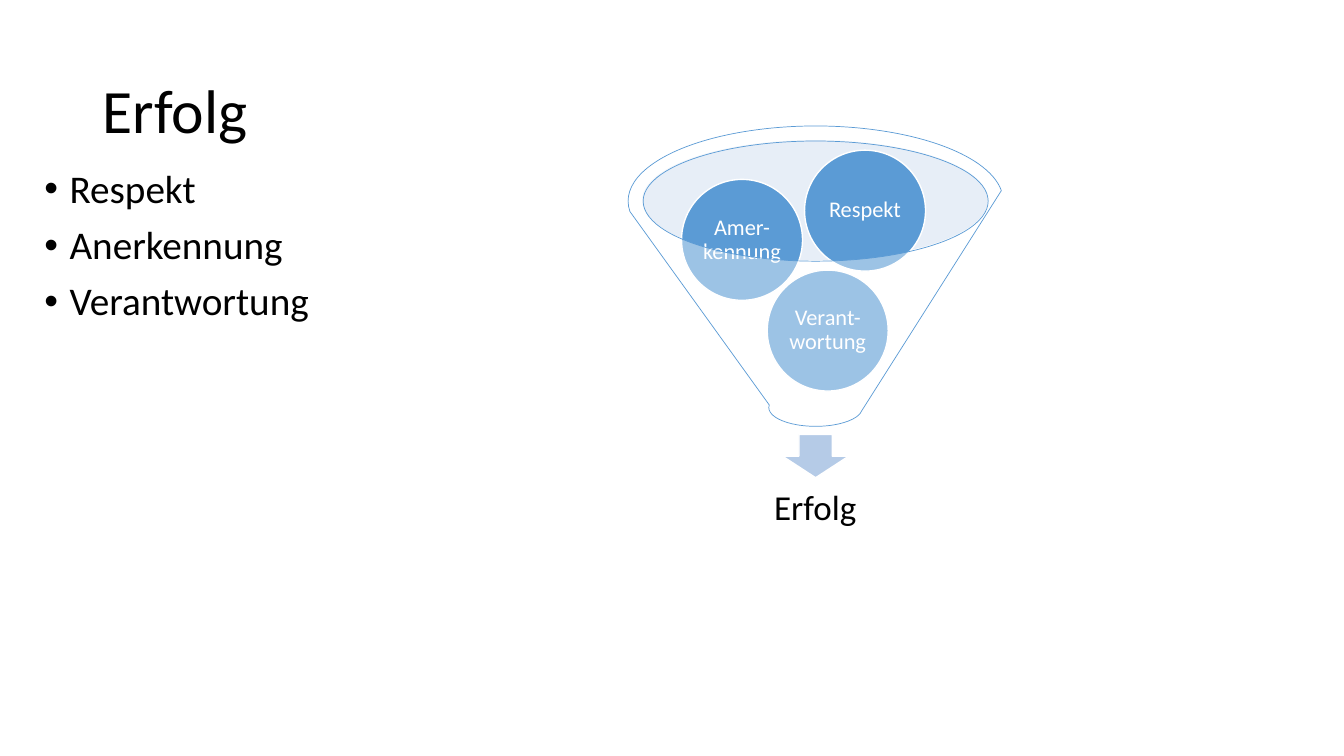
from pptx import Presentation
from pptx.dml.color import RGBColor
from pptx.enum.shapes import MSO_SHAPE
from pptx.enum.text import MSO_ANCHOR, MSO_AUTO_SIZE, PP_ALIGN
from pptx.oxml.ns import qn
from pptx.util import Inches, Pt
from lxml.etree import SubElement

BLACK = RGBColor(0x00, 0x00, 0x00)
WHITE = RGBColor(0xFF, 0xFF, 0xFF)
BLUE = RGBColor(0x5B, 0x9B, 0xD5)
ARROW_BLUE = RGBColor(0xB5, 0xCB, 0xE7)
PALE_BLUE = RGBColor(0xC4, 0xD5, 0xEB)

CIRCLE_SIZE = 1.2
CIRCLES = [
    ("Verant-wortung", 7.61, 2.68),
    ("Amer-kennung", 6.76, 1.78),
    ("Respekt", 7.98, 1.49),
]


class FunnelSlide:
    def __init__(self, deck, font_name="Calibri"):
        self.page = deck.slides.add_slide(deck.slide_layouts[1])
        self.font_name = font_name

    def style_paragraph(self, para, size, color, alignment):
        para.font.name = self.font_name
        para.font.size = Pt(size)
        para.font.color.rgb = color
        para.alignment = alignment
        para.line_spacing = 0.9

    def place(self, shape, left, top, width, height):
        shape.left, shape.top = Inches(left), Inches(top)
        shape.width, shape.height = Inches(width), Inches(height)

    def title(self, text, *bounds):
        title = self.page.shapes.title
        self.place(title, *bounds)
        frame = title.text_frame
        frame.text = text
        frame.auto_size = MSO_AUTO_SIZE.NONE
        frame.vertical_anchor = MSO_ANCHOR.MIDDLE
        self.style_paragraph(frame.paragraphs[0], 44, BLACK, PP_ALIGN.LEFT)

    def bullets(self, items, *bounds):
        body = self.page.placeholders[1]
        self.place(body, *bounds)
        frame = body.text_frame
        frame.text = "\n".join(items)
        frame.auto_size = MSO_AUTO_SIZE.NONE
        for para in frame.paragraphs:
            self.style_paragraph(para, 28, BLACK, PP_ALIGN.LEFT)
            para.space_before = Pt(10)
            properties = para._p.get_or_add_pPr()
            properties.set("marL", str(Inches(0.25)))
            properties.set("indent", str(Inches(-0.25)))
            SubElement(properties, qn("a:buFont")).set("typeface", "Arial")
            SubElement(properties, qn("a:buChar")).set("char", "•")

    def shape(self, kind, bounds, fill, line=None, line_width=1, opacity=100):
        shape = self.page.shapes.add_shape(kind, *map(Inches, bounds))
        shape.shadow.inherit = False
        shape.fill.solid()
        shape.fill.fore_color.rgb = fill
        if opacity < 100:
            color = shape.fill._xPr.find(qn("a:solidFill"))[0]
            SubElement(color, qn("a:alpha")).set("val", str(opacity * 1000))
        if line is None:
            shape.line.fill.background()
        else:
            shape.line.color.rgb = line
            shape.line.width = Pt(line_width)
        return shape

    def label(self, shape, text, size, color, inset):
        frame = shape.text_frame
        frame.word_wrap = True
        frame.vertical_anchor = MSO_ANCHOR.MIDDLE
        frame.margin_left = frame.margin_right = Inches(inset)
        frame.margin_top = frame.margin_bottom = Inches(inset)
        frame.text = text
        self.style_paragraph(frame.paragraphs[0], size, color, PP_ALIGN.CENTER)

    def circle(self, text, left, top):
        bounds = (left, top, CIRCLE_SIZE, CIRCLE_SIZE)
        circle = self.shape(MSO_SHAPE.OVAL, bounds, BLUE, WHITE)
        self.label(circle, text, 16, WHITE, 0.02)

    def caption(self, text, *bounds):
        box = self.page.shapes.add_textbox(*map(Inches, bounds))
        self.label(box, text, 25, BLACK, 0.19)


def main():
    deck = Presentation()
    deck.slide_width, deck.slide_height = Inches(13.33), Inches(7.5)
    slide = FunnelSlide(deck)
    slide.title("Erfolg", 0.92, 0.4, 11.5, 1.45)
    slide.bullets(["Respekt", "Anerkennung", "Verantwortung"], 0.34, 1.63, 11.5, 4.76)

    slide.shape(MSO_SHAPE.OVAL, (6.37, 1.39, 3.43, 1.19), PALE_BLUE, opacity=40)
    slide.shape(MSO_SHAPE.DOWN_ARROW, (7.76, 4.31, 0.66, 0.43), ARROW_BLUE, WHITE)
    slide.caption("Erfolg", 6.49, 4.65, 3.19, 0.8)
    for text, left, top in CIRCLES:
        slide.circle(text, left, top)
    slide.shape(MSO_SHAPE.FUNNEL, (6.23, 1.25, 3.72, 2.98), WHITE, BLUE, 0.5, opacity=40)
    deck.save("out.pptx")


if __name__ == "__main__":
    main()
